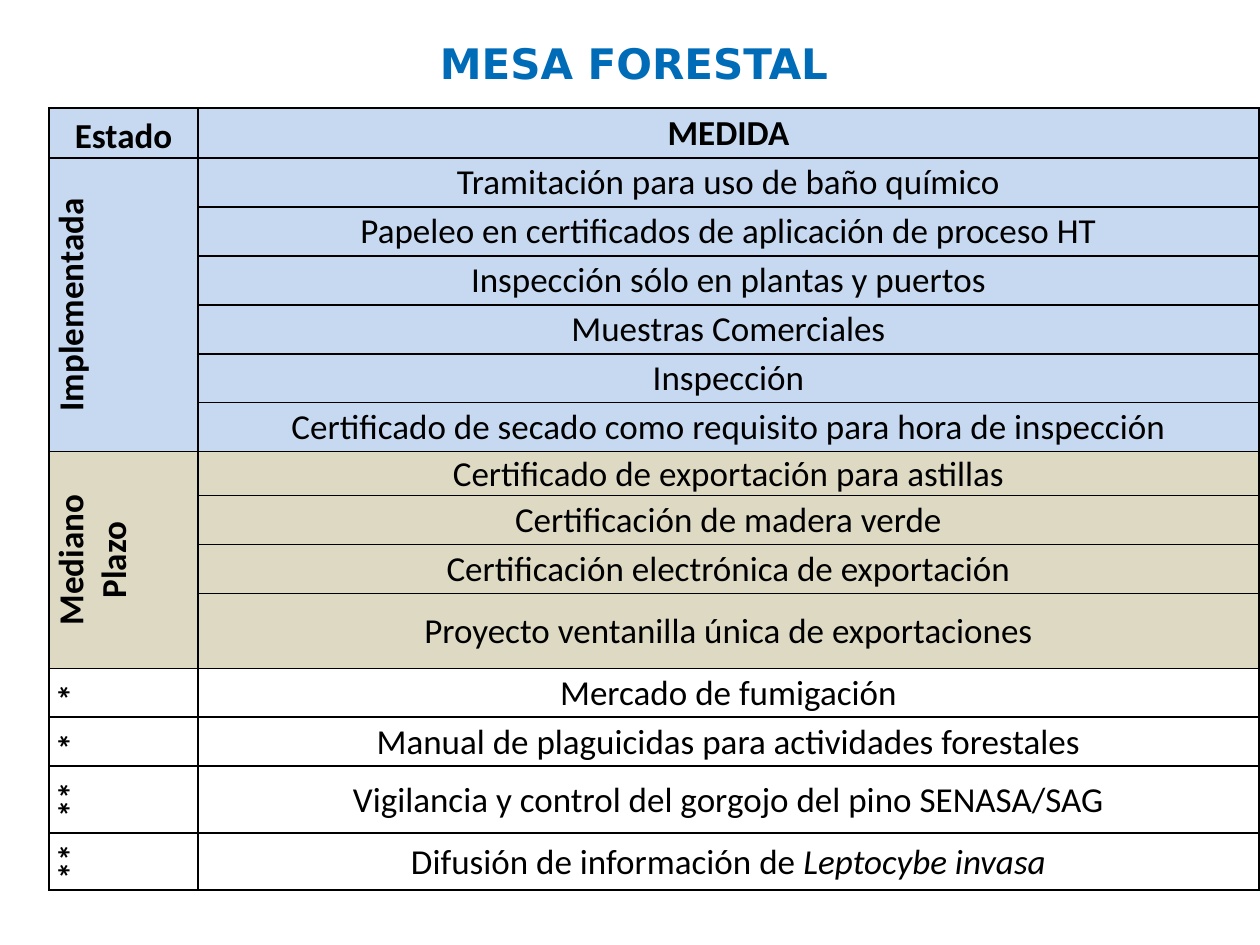
from lxml import etree
from pptx import Presentation
from pptx import util as u
from pptx.dml.color import RGBColor
from pptx.enum import text
from pptx.oxml.ns import qn

SCALE = 914400 / 126
BLUE, SAND, WHITE = "C6D9F1", "DDD9C3", "FFFFFF"
GROUPS = [
    ("Implementada", BLUE, [
        "Tramitación para uso de baño químico",
        "Papeleo en certificados de aplicación de proceso HT",
        "Inspección sólo en plantas y puertos",
        "Muestras Comerciales",
        "Inspección",
        "Certificado de secado como requisito para hora de inspección",
    ]),
    ("Mediano Plazo", SAND, [
        "Certificado de exportación para astillas",
        "Certificación de madera verde",
        "Certificación electrónica de exportación",
        "Proyecto ventanilla única de exportaciones",
    ]),
    ("*", WHITE, ["Mercado de fumigación"]),
    ("*", WHITE, ["Manual de plaguicidas para actividades forestales"]),
    ("**", WHITE, ["Vigilancia y control del gorgojo del pino SENASA/SAG"]),
    ("**", WHITE, ["Difusión de información de "]),
]
COLS = [149, 1061]
ROWS = [50] + [49] * 6 + [39] + [49] * 5 + [67, 57]


def px(n):
    return u.Emu(round(n * SCALE))


def color(code):
    return RGBColor.from_string(code)


def style(run, size, face, code, bold):
    font = run.font
    font.size, font.name, font.bold = u.Pt(size), face, bold
    font.color.rgb = color(code)


def border(cell):
    """Draw a thin black line on all four sides."""
    props = cell._tc.get_or_add_tcPr()
    for i, side in enumerate(("lnL", "lnR", "lnT", "lnB")):
        line = etree.Element(qn("a:" + side), w=str(u.Pt(1)))
        fill = etree.SubElement(line, qn("a:solidFill"))
        etree.SubElement(fill, qn("a:srgbClr"), val="000000")
        props.insert(i, line)


def paint(cell, code):
    border(cell)
    cell.fill.solid()
    cell.fill.fore_color.rgb = color(code)


def write(cell, words, bold=False, anchor=text.MSO_ANCHOR.MIDDLE):
    cell.margin_left = cell.margin_right = cell.margin_top = px(1)
    cell.margin_bottom = 0
    cell.vertical_anchor = anchor
    para = cell.text_frame.paragraphs[0]
    para.text = words
    para.alignment = text.PP_ALIGN.CENTER
    style(para.runs[0], 20, "Calibri", "000000", bold)
    return para


def add_title(slide, words):
    title = slide.shapes.title
    title.left, title.top, title.width, title.height = map(px, (118, 29, 1032, 74))
    frame = title.text_frame
    frame.text = words
    frame.word_wrap = True
    frame.vertical_anchor = text.MSO_ANCHOR.MIDDLE
    frame.margin_top, frame.margin_bottom = 0, px(6)
    para = frame.paragraphs[0]
    para.alignment = text.PP_ALIGN.CENTER
    style(para.runs[0], 24, "DejaVu Sans", "006CB7", True)


def add_grid(slide):
    table = slide.shapes.add_table(
        len(ROWS), len(COLS), px(49), px(108), px(sum(COLS)), px(sum(ROWS))
    ).table
    for col, width in zip(table.columns, COLS):
        col.width = px(width)
    for row, height in zip(table.rows, ROWS):
        row.height = px(height)
    return table


def add_group(table, top, state, code, items):
    """Fill one state and its measures; give the next free row."""
    head = table.cell(top, 0)
    for row, item in enumerate(items, top):
        paint(table.cell(row, 0), code)
        paint(table.cell(row, 1), code)
        para = write(table.cell(row, 1), item)
    write(head, state, True)
    head._tc.get_or_add_tcPr().set("vert", "vert270")
    end = top + len(items)
    if len(items) > 1:
        head.merge(table.cell(end - 1, 0))
    return end, para


def main():
    deck = Presentation()
    deck.slide_width, deck.slide_height = px(1260), px(945)
    slide = deck.slides.add_slide(deck.slide_layouts[5])
    add_title(slide, "MESA FORESTAL")

    table = add_grid(slide)
    for cell in table.rows[0].cells:
        paint(cell, BLUE)
    write(table.cell(0, 0), "Estado", True, text.MSO_ANCHOR.BOTTOM)
    write(table.cell(0, 1), "MEDIDA", True)

    row = 1
    for state, code, items in GROUPS:
        row, last = add_group(table, row, state, code, items)
    name = last.add_run()
    name.text = "Leptocybe invasa"
    style(name, 20, "Calibri", "000000", False)
    name.font.italic = True

    deck.save("out.pptx")


if __name__ == "__main__":
    main()
